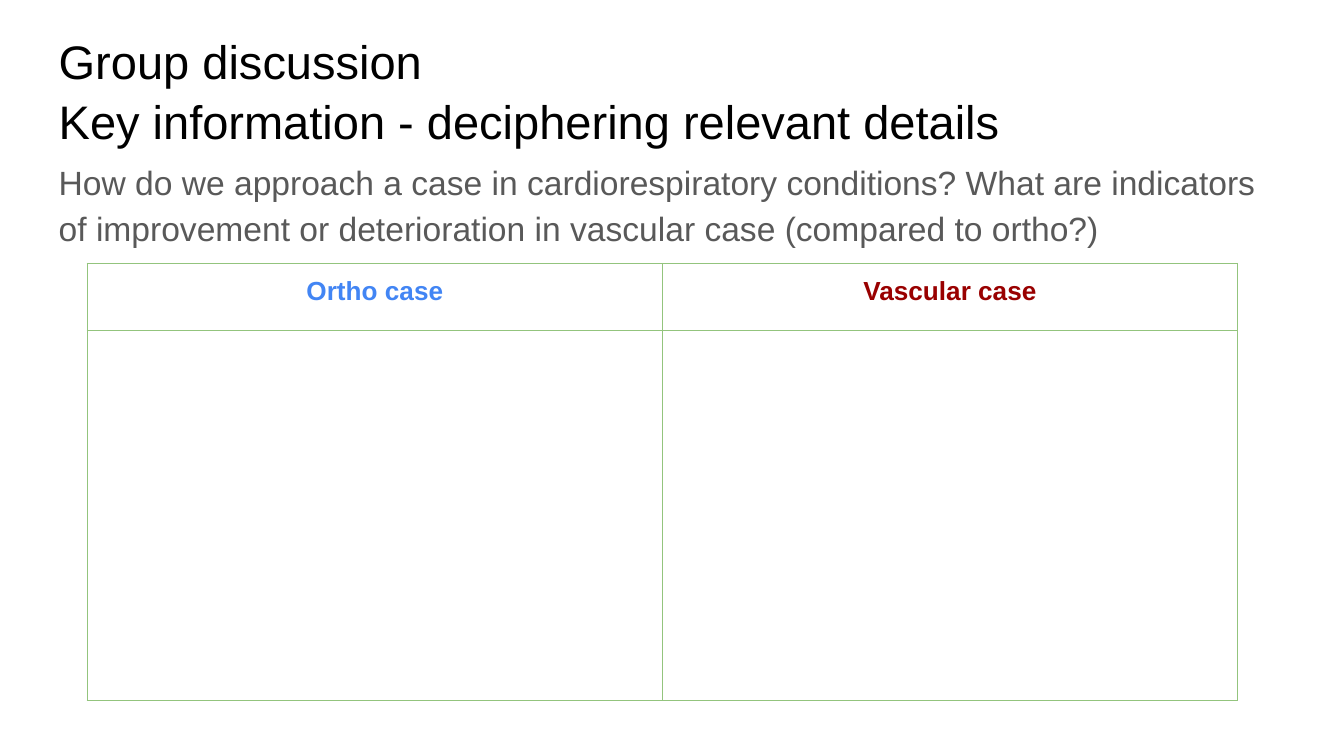
import dataclasses

import pptx
import pptx.dml.color
import pptx.enum.text
import pptx.oxml
import pptx.oxml.ns
import pptx.util

Cm = pptx.util.Cm
Pt = pptx.util.Pt


@dataclasses.dataclass(frozen=True)
class Theme:
    font: str = "Arial"
    background: str = "FFFFFF"
    title: str = "000000"
    body: str = "595959"
    ortho: str = "4285F4"
    vascular: str = "990000"
    border: str = "93C47D"
    title_size: float = 25.2
    body_size: float = 18
    header_size: float = 14
    border_width: float = 0.75
    inset: float = 0.25


@dataclasses.dataclass(frozen=True)
class TextBlock:
    lines: tuple[str, ...]
    top: float
    height: float
    size: float
    color: str
    spacing: float


@dataclasses.dataclass(frozen=True)
class Column:
    heading: str
    color: str


THEME = Theme()
TEXT_LEFT, TEXT_WIDTH = 0.86, 23.67
TABLE_LEFT, TABLE_TOP = 1.65, 4.98
COLUMN_WIDTH = 10.87
ROW_HEIGHTS = (1.27, 6.99)

BLOCKS = (
    TextBlock(
        ("Group discussion", "Key information - deciphering relevant details"),
        0.32, 1.98, THEME.title_size, THEME.title, 1.05,
    ),
    TextBlock(
        ("How do we approach a case in cardiorespiratory conditions? What are "
         "indicators of improvement or deterioration in vascular case "
         "(compared to ortho?)",),
        2.7, 10, THEME.body_size, THEME.body, 1.15,
    ),
)
COLUMNS = (
    Column("Ortho case", THEME.ortho),
    Column("Vascular case", THEME.vascular),
)


def rgb(color: str) -> pptx.dml.color.RGBColor:
    return pptx.dml.color.RGBColor.from_string(color)


def format_runs(p, size: float, color: str, bold: bool = False) -> None:
    for r in p.runs:
        r.font.name = THEME.font
        r.font.size = Pt(size)
        r.font.bold = bold
        r.font.color.rgb = rgb(color)


def set_margins(holder) -> None:
    holder.margin_left = holder.margin_right = Cm(THEME.inset)
    holder.margin_top = holder.margin_bottom = Cm(THEME.inset)


def draw_text(s, block: TextBlock) -> None:
    sp = s.shapes.add_textbox(
        Cm(TEXT_LEFT), Cm(block.top), Cm(TEXT_WIDTH), Cm(block.height))
    tf = sp.text_frame
    tf.word_wrap = True
    set_margins(tf)
    tf.text = "\n".join(block.lines)
    for p in tf.paragraphs:
        p.line_spacing = block.spacing
        format_runs(p, block.size, block.color)


def draw_borders(cell) -> None:
    tc_pr = cell._tc.get_or_add_tcPr()
    for index, side in enumerate(("lnL", "lnR", "lnT", "lnB")):
        line = pptx.oxml.parse_xml(
            f'<a:{side} {pptx.oxml.ns.nsdecls("a")} w="{Pt(THEME.border_width)}">'
            f'<a:solidFill><a:srgbClr val="{THEME.border}"/></a:solidFill>'
            f'</a:{side}>')
        tc_pr.insert(index, line)


def draw_table(s, columns: tuple[Column, ...]) -> None:
    table = s.shapes.add_table(
        len(ROW_HEIGHTS), len(columns), Cm(TABLE_LEFT), Cm(TABLE_TOP),
        Cm(COLUMN_WIDTH * len(columns)), Cm(sum(ROW_HEIGHTS))).table
    table.first_row = table.horz_banding = False
    for row, height in zip(table.rows, ROW_HEIGHTS):
        row.height = Cm(height)
    for i, column in enumerate(columns):
        table.columns[i].width = Cm(COLUMN_WIDTH)
        header = table.cell(0, i)
        header.text_frame.text = column.heading
        p = header.text_frame.paragraphs[0]
        p.alignment = pptx.enum.text.PP_ALIGN.CENTER
        format_runs(p, THEME.header_size, column.color, bold=True)
    for cell in table.iter_cells():
        set_margins(cell)
        cell.fill.background()
        draw_borders(cell)


def main() -> None:
    prs = pptx.Presentation()
    prs.slide_width, prs.slide_height = Cm(25.4), Cm(14.29)
    s = prs.slides.add_slide(prs.slide_layouts[6])
    s.background.fill.solid()
    s.background.fill.fore_color.rgb = rgb(THEME.background)
    for block in BLOCKS:
        draw_text(s, block)
    draw_table(s, COLUMNS)
    prs.save("out.pptx")


if __name__ == "__main__":
    main()
